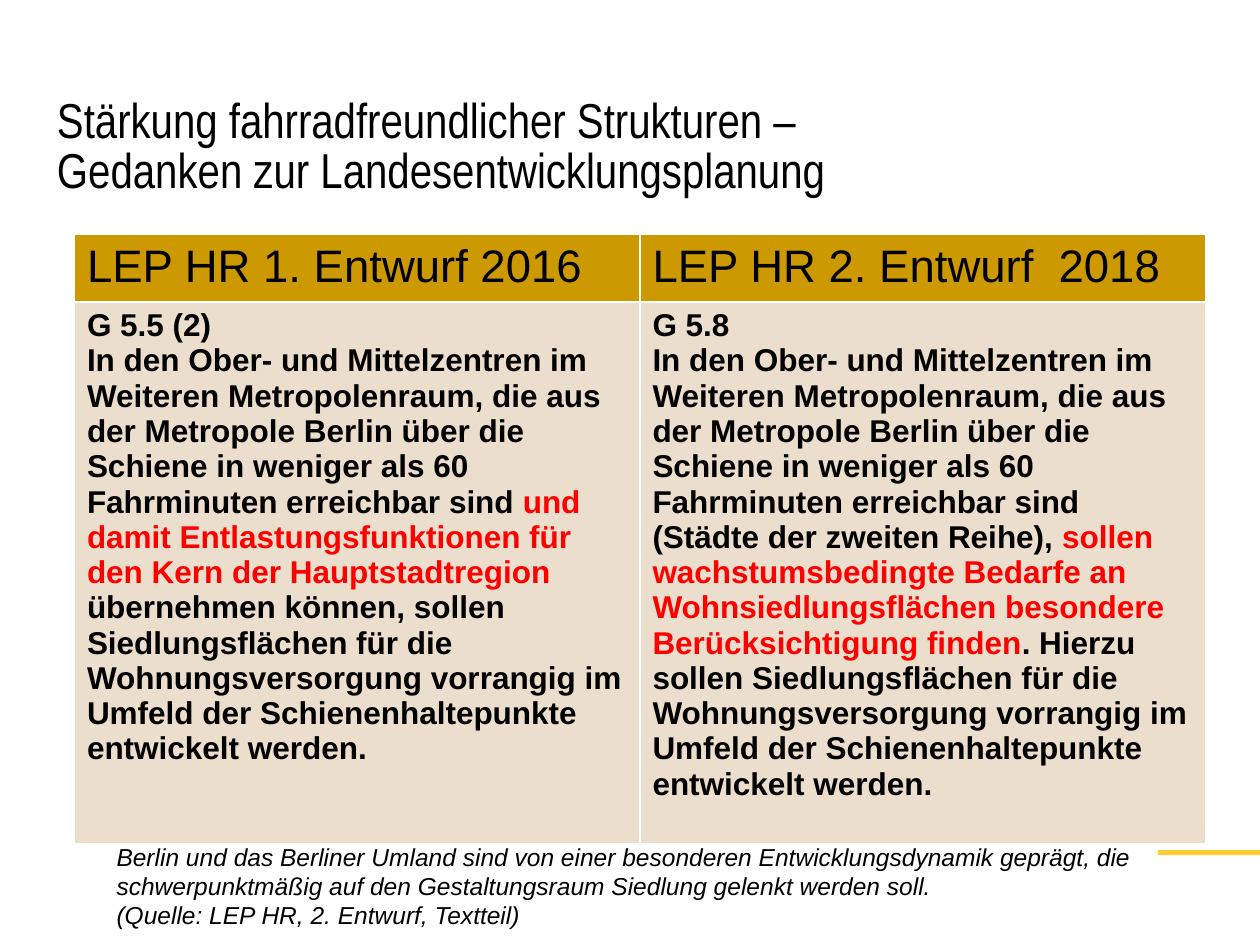
from lxml.etree import SubElement
from pptx import Presentation
from pptx.dml.color import RGBColor
from pptx.enum.shapes import MSO_SHAPE
from pptx.enum.text import MSO_ANCHOR
from pptx.oxml.ns import qn
from pptx.util import Cm, Pt

COLORS = {
    "text": "000000",
    "highlight": "FF0000",
    "header": "CC9900",
    "body": "ECDECC",
    "border": "FFFFFF",
    "accent": "FFCC33",
}

HEADERS = ["LEP HR 1. Entwurf 2016", "LEP HR 2. Entwurf  2018"]
INTRO = ("In den Ober- und Mittelzentren im Weiteren Metropolenraum, die aus der "
         "Metropole Berlin über die Schiene in weniger als 60 Fahrminuten "
         "erreichbar sind ")
ENDING = ("sollen Siedlungsflächen für die Wohnungsversorgung vorrangig im Umfeld "
          "der Schienenhaltepunkte entwickelt werden.")
# Each paragraph is a list of (text, colour name) runs.
DRAFTS = [
    [
        [("G 5.5 (2)", "text")],
        [(INTRO, "text"),
         ("und damit Entlastungsfunktionen für den Kern der Hauptstadtregion ",
          "highlight"),
         ("übernehmen können, " + ENDING, "text")],
    ],
    [
        [("G 5.8", "text")],
        [(INTRO + "(Städte der zweiten Reihe), ", "text"),
         ("sollen wachstumsbedingte Bedarfe an Wohnsiedlungsflächen besondere "
          "Berücksichtigung finden", "highlight"),
         (". Hierzu " + ENDING, "text")],
    ],
]
TITLE = ("Stärkung fahrradfreundlicher Strukturen – \v"
         "Gedanken zur Landesentwicklungsplanung")
NOTE = [
    "Berlin und das Berliner Umland sind von einer besonderen Entwicklungsdynamik "
    "geprägt, die schwerpunktmäßig auf den Gestaltungsraum Siedlung gelenkt "
    "werden soll.",
    "(Quelle: LEP HR, 2. Entwurf, Textteil)",
]


def rgb(name):
    return RGBColor.from_string(COLORS[name])


def plain(*texts):
    return [[(text, "text")] for text in texts]


def write(tf, paragraphs, size, font="Arial", bold=False, italic=False, spacing=None):
    for i, runs in enumerate(paragraphs):
        p = tf.paragraphs[0] if i == 0 else tf.add_paragraph()
        for text, color in runs:
            if len(runs) == 1:
                p.text = text
                p.font.color.rgb = rgb(color)
            else:
                r = p.add_run()
                r.text = text
                r.font.color.rgb = rgb(color)
        p.font.name = font
        p.font.size = Pt(size)
        p.font.bold = bold
        p.font.italic = italic
        if spacing:
            p.line_spacing = spacing


def add_text(s, box, paragraphs, size, anchor=MSO_ANCHOR.TOP, **style):
    tf = s.shapes.add_textbox(*map(Cm, box)).text_frame
    tf.word_wrap = True
    tf.vertical_anchor = anchor
    write(tf, paragraphs, size, **style)


def add_accent_bar(s):
    sp = s.shapes.add_shape(MSO_SHAPE.RECTANGLE, Cm(23.34), Cm(17.14), Cm(2.06), Cm(0.1))
    sp.shadow.inherit = False
    sp.fill.solid()
    sp.fill.fore_color.rgb = rgb("accent")
    sp.line.fill.background()


def style_cell(cell, fill):
    """Give the cell thin borders on all sides and a solid fill."""
    tcPr = cell._tc.get_or_add_tcPr()
    for side in ("a:lnL", "a:lnR", "a:lnT", "a:lnB"):
        ln = SubElement(tcPr, qn(side), w=str(Pt(1)))
        SubElement(SubElement(ln, qn("a:solidFill")), qn("a:srgbClr"),
                   val=COLORS["border"])
    cell.fill.solid()
    cell.fill.fore_color.rgb = rgb(fill)


def add_comparison(s):
    table = s.shapes.add_table(2, 2, Cm(1.5), Cm(4.73), Cm(22.8), Cm(11.47)).table
    for row, height in zip(table.rows, (1.27, 10.2)):
        row.height = Cm(height)
    for col, (header, draft) in enumerate(zip(HEADERS, DRAFTS)):
        top, bottom = table.cell(0, col), table.cell(1, col)
        style_cell(top, "header")
        write(top.text_frame, plain(header), 26)
        style_cell(bottom, "body")
        write(bottom.text_frame, draft, 18, bold=True)


def main():
    prs = Presentation()
    prs.slide_width, prs.slide_height = Cm(25.4), Cm(19.05)
    s = prs.slides.add_slide(prs.slide_layouts[6])
    add_accent_bar(s)
    add_text(s, (0.9, 1.72, 22.43, 2.54), plain(TITLE), 28, MSO_ANCHOR.MIDDLE,
             font="Arial Narrow", spacing=0.85)
    add_comparison(s)
    add_text(s, (2.1, 16.84, 21.82, 2.05), plain(*NOTE), 14, italic=True)
    prs.save("out.pptx")


if __name__ == "__main__":
    main()
